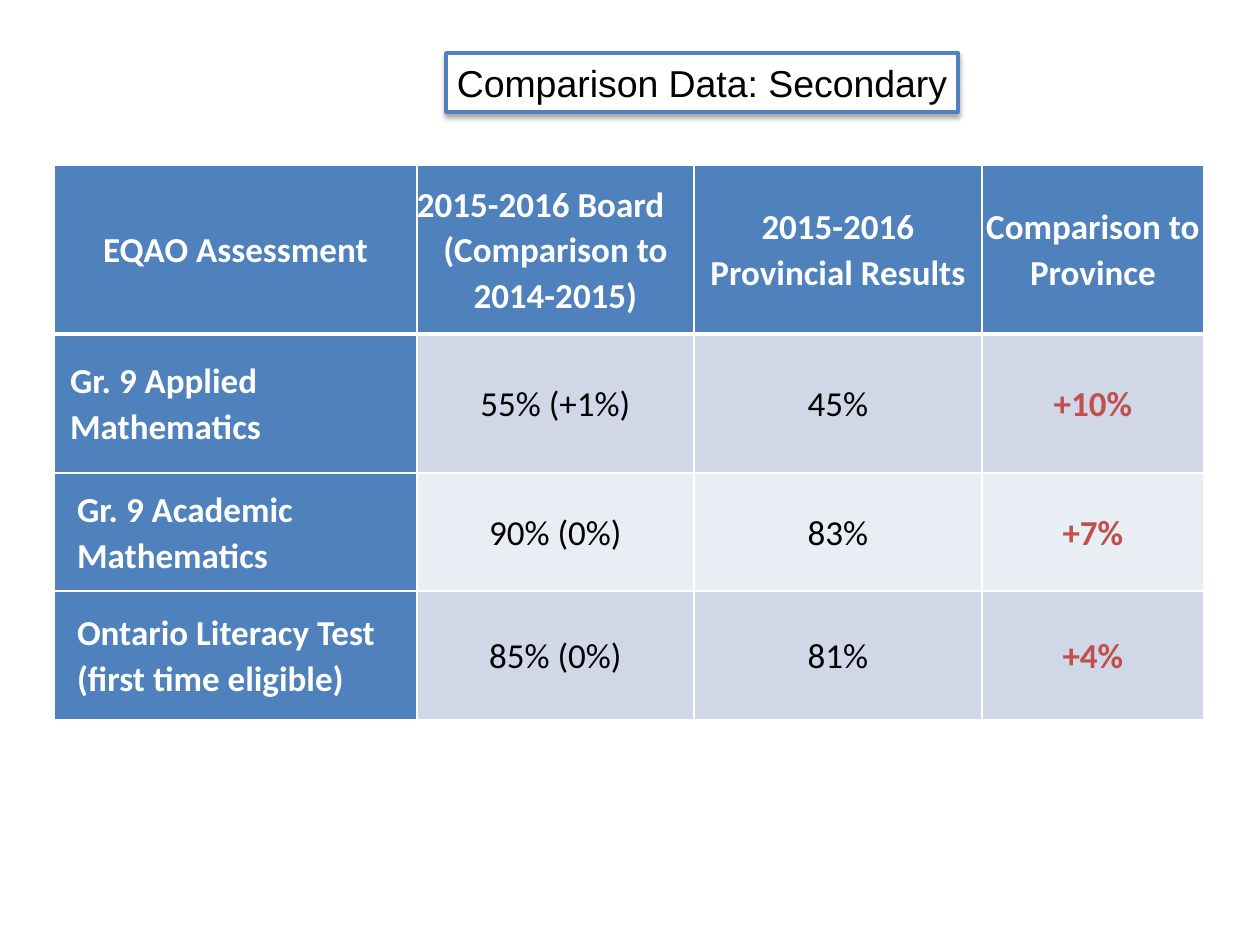
from dataclasses import dataclass

from lxml import etree
from pptx import Presentation
from pptx.dml.color import RGBColor
from pptx.enum.shapes import MSO_SHAPE
from pptx.enum.text import MSO_ANCHOR, PP_ALIGN
from pptx.oxml.ns import qn
from pptx.util import Pt

PX = 914400 / 126
LEFT, CENTER = PP_ALIGN.LEFT, PP_ALIGN.CENTER
MIDDLE = MSO_ANCHOR.MIDDLE
RECTANGLE = MSO_SHAPE.RECTANGLE

COLORS = {
    "white": "FFFFFF",
    "black": "000000",
    "blue": "4F81BD",
    "band_dark": "D0D8E8",
    "band_light": "E9EDF4",
    "red": "C0504D",
}
COLUMN_WIDTHS = [363, 277, 288, 222]
ROW_HEIGHTS = [169, 139, 118, 129]


@dataclass(frozen=True)
class Line:
    text: str
    align: PP_ALIGN = CENTER
    indent: int = 0


@dataclass(frozen=True)
class CellStyle:
    fill: str
    color: str
    bold: bool


@dataclass(frozen=True)
class Result:
    assessment: str
    board: str
    province: str
    difference: str
    indent: int


HEADINGS = [
    [Line("EQAO Assessment")],
    [Line("2015-2016 Board", LEFT), Line("(Comparison to 2014-2015)")],
    [Line("2015-2016 Provincial Results")],
    [Line("Comparison to Province")],
]
RESULTS = [
    Result("Gr. 9 Applied Mathematics", "55% (+1%)", "45%", "+10%", 16),
    Result("Gr. 9 Academic Mathematics", "90% (0%)", "83%", "+7%", 23),
    Result("Ontario Literacy Test (first time eligible)", "85% (0%)", "81%", "+4%", 23),
]


def px(length: int) -> int:
    return round(length * PX)


def rgb(name: str) -> RGBColor:
    return RGBColor.from_string(COLORS[name])


def add_run(paragraph, text: str, font: str, size: float, color: str, bold: bool) -> None:
    run = paragraph.add_run()
    run.text = text
    run.font.name = font
    run.font.size = Pt(size)
    run.font.bold = bold
    run.font.color.rgb = rgb(color)


def set_margins(holder, margin: int) -> None:
    holder.margin_left = holder.margin_right = px(margin)
    holder.margin_top = holder.margin_bottom = px(margin)


def add_color(parent, name: str):
    return etree.SubElement(parent, qn("a:srgbClr"), val=COLORS[name])


def set_borders(cell, top: int, bottom: int) -> None:
    properties = cell._tc.get_or_add_tcPr()
    widths = {"a:lnL": 1, "a:lnR": 1, "a:lnT": top, "a:lnB": bottom}
    for position, (side, width) in enumerate(widths.items()):
        border = etree.Element(qn(side), w=str(Pt(width)))
        add_color(etree.SubElement(border, qn("a:solidFill")), "white")
        properties.insert(position, border)


def fill_cell(cell, lines: list[Line], style: CellStyle, row: int) -> None:
    cell.fill.solid()
    cell.fill.fore_color.rgb = rgb(style.fill)
    cell.vertical_anchor = MIDDLE
    set_margins(cell, 0)
    set_borders(cell, top=3 if row == 1 else 1, bottom=3 if row == 0 else 1)
    frame = cell.text_frame
    for number, line in enumerate(lines):
        paragraph = frame.add_paragraph() if number else frame.paragraphs[0]
        paragraph.alignment = line.align
        paragraph.line_spacing = 1.07
        if line.indent:
            paragraph._p.get_or_add_pPr().set("marL", str(px(line.indent)))
        add_run(paragraph, line.text, "Calibri", 20, style.color, style.bold)


def add_results_table(slide) -> None:
    table = slide.shapes.add_table(
        len(ROW_HEIGHTS), len(COLUMN_WIDTHS), px(54), px(165),
        px(sum(COLUMN_WIDTHS)), px(sum(ROW_HEIGHTS)),
    ).table
    table.first_row = table.horz_banding = False
    for column, width in zip(table.columns, COLUMN_WIDTHS):
        column.width = px(width)
    for row, height in zip(table.rows, ROW_HEIGHTS):
        row.height = px(height)

    heading_style = CellStyle("blue", "white", True)
    for column, lines in enumerate(HEADINGS):
        fill_cell(table.cell(0, column), lines, heading_style, 0)
    for row, result in enumerate(RESULTS, 1):
        band = "band_dark" if row % 2 else "band_light"
        figure_style = CellStyle(band, "black", False)
        contents = [
            (Line(result.assessment, LEFT, result.indent), heading_style),
            (Line(result.board), figure_style),
            (Line(result.province), figure_style),
            (Line(result.difference), CellStyle(band, "red", True)),
        ]
        for column, (line, style) in enumerate(contents):
            fill_cell(table.cell(row, column), [line], style, row)


def add_title(slide) -> None:
    title = slide.shapes.add_shape(RECTANGLE, px(446), px(53), px(512), px(59))
    title.fill.solid()
    title.fill.fore_color.rgb = rgb("white")
    title.line.color.rgb = rgb("blue")
    title.line.width = Pt(2)
    title.shadow.inherit = False
    effects = title._element.spPr.find(qn("a:effectLst"))
    shadow = etree.SubElement(
        effects, qn("a:outerShdw"), blurRad=str(Pt(3)), dist=str(Pt(1.8)),
        dir="5400000", rotWithShape="0",
    )
    etree.SubElement(add_color(shadow, "black"), qn("a:alpha"), val="35000")
    frame = title.text_frame
    frame.word_wrap = False
    frame.vertical_anchor = MIDDLE
    set_margins(frame, 6)
    paragraph = frame.paragraphs[0]
    paragraph.alignment = CENTER
    add_run(paragraph, "Comparison Data: Secondary", "Arial", 21.4, "black", False)


def main() -> None:
    presentation = Presentation()
    presentation.slide_width = px(1260)
    presentation.slide_height = px(945)
    slide = presentation.slides.add_slide(presentation.slide_layouts[6])
    add_results_table(slide)
    add_title(slide)
    presentation.save("out.pptx")


if __name__ == "__main__":
    main()
